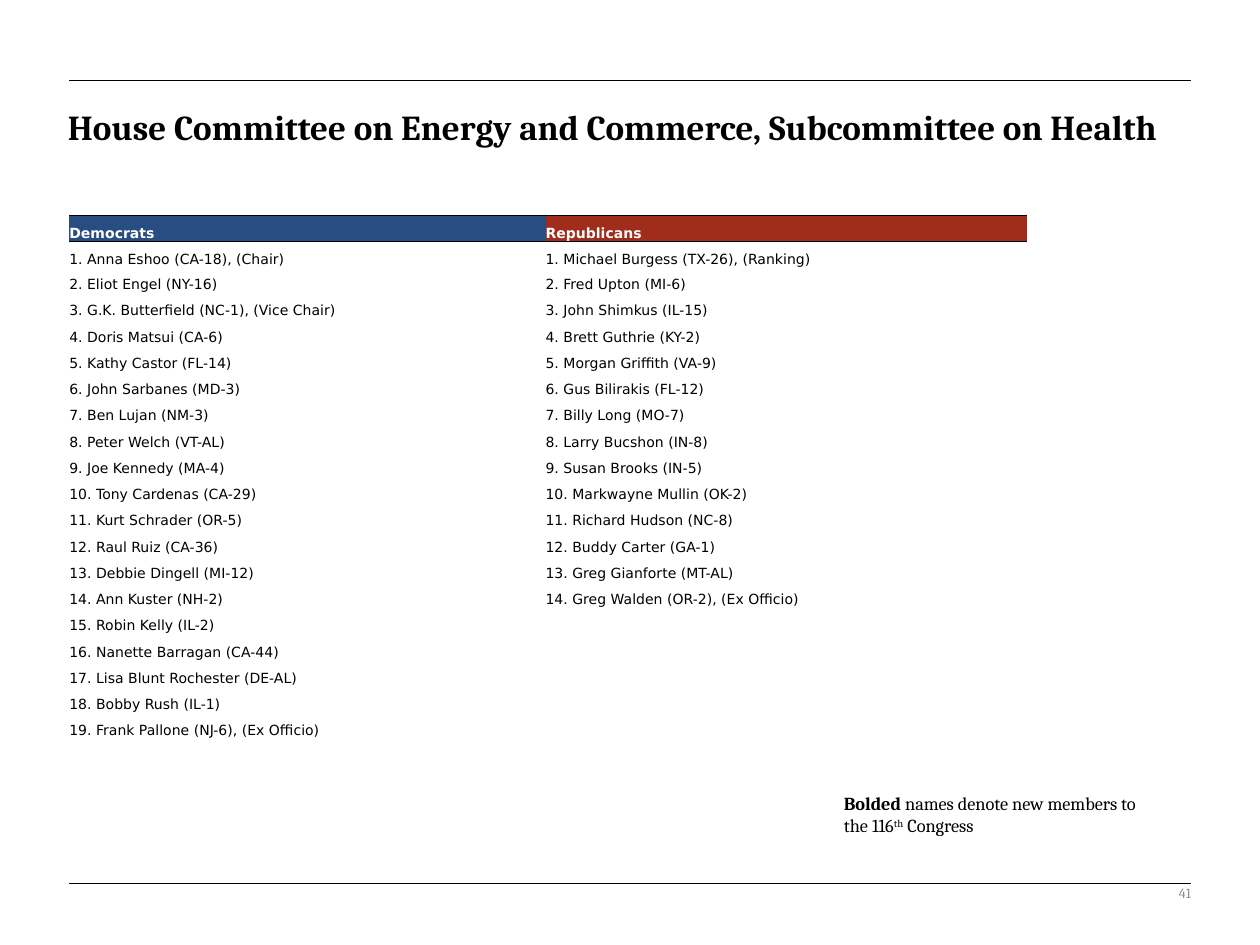
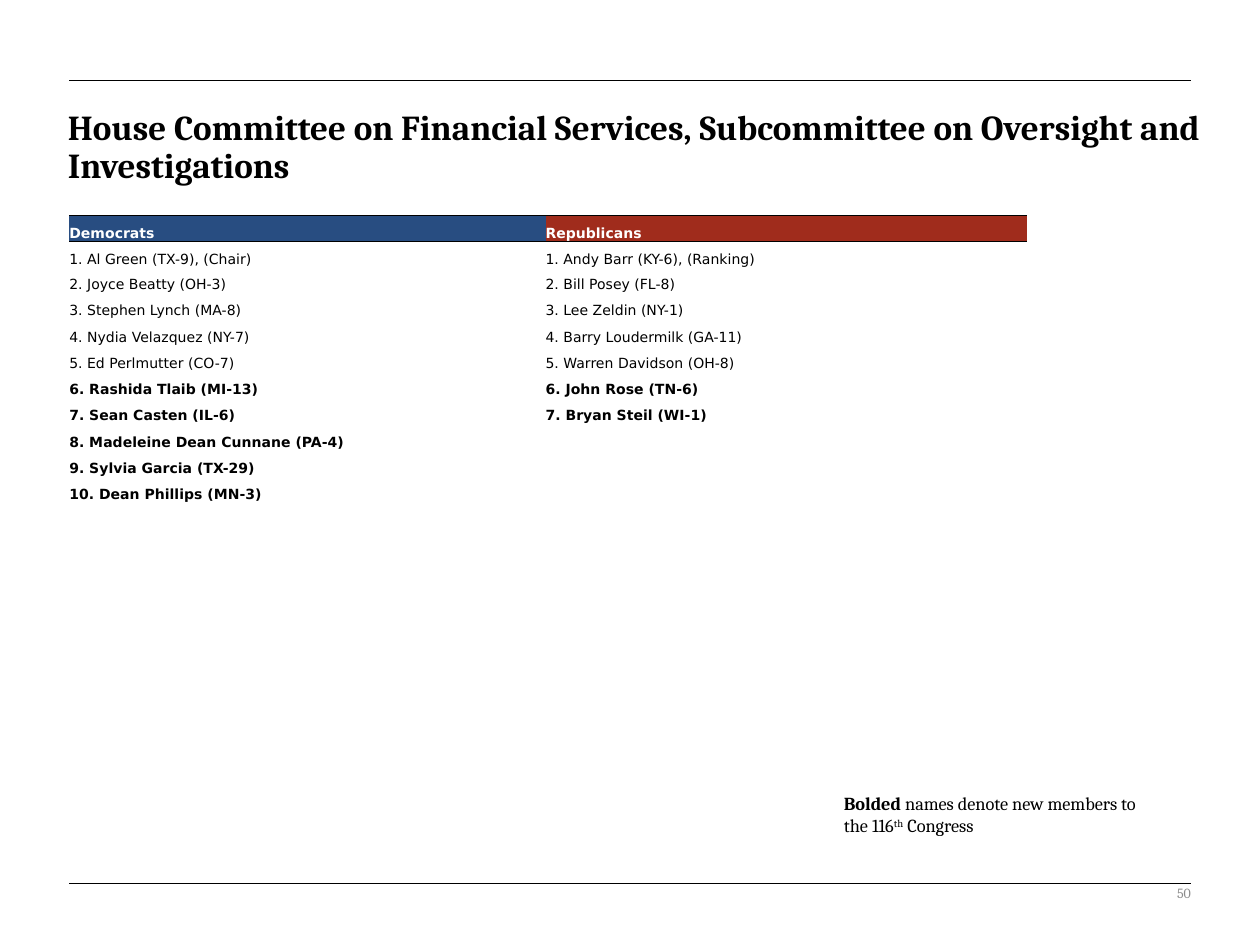
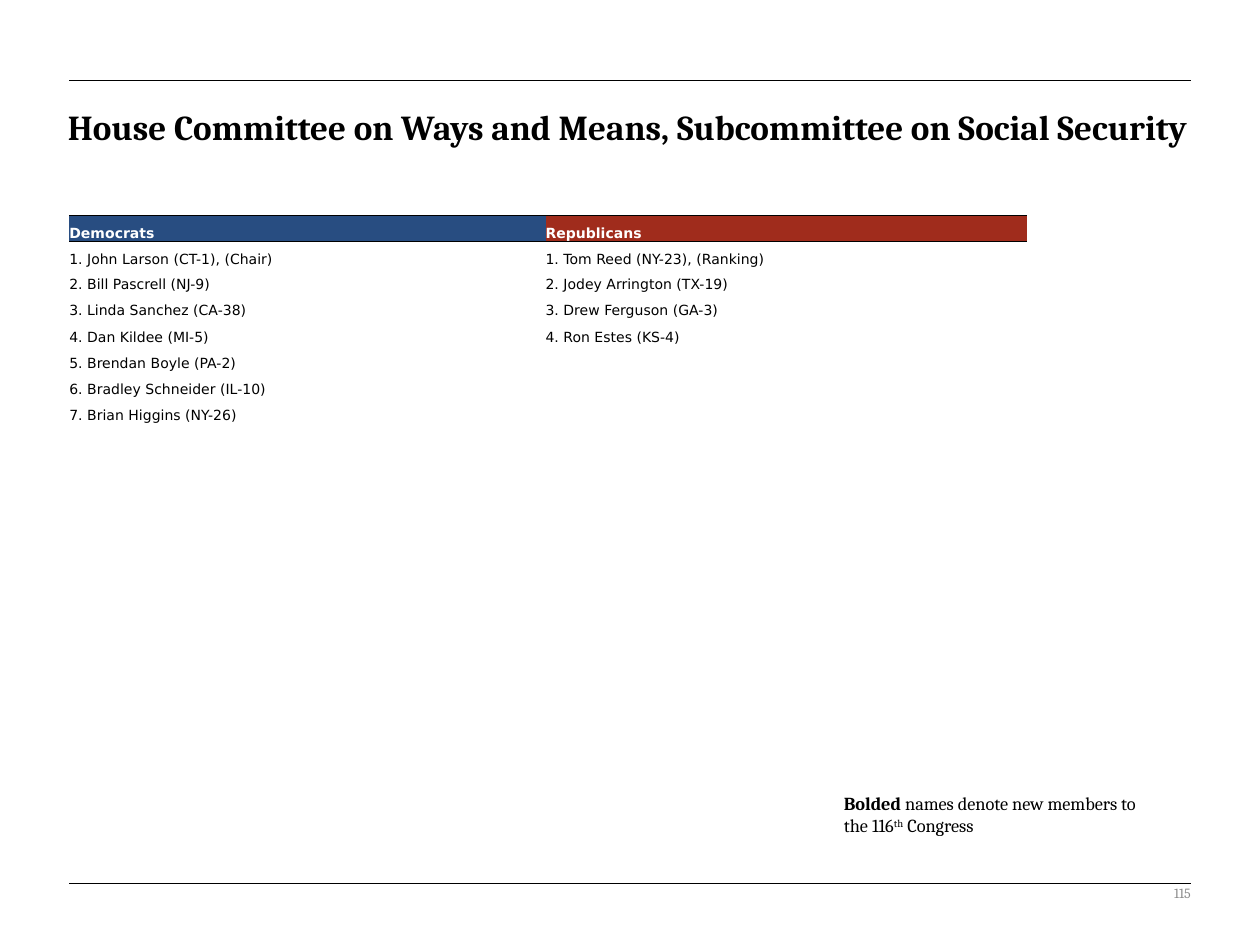
from dataclasses import dataclass
from itertools import zip_longest
from typing import NamedTuple

from lxml import etree
from pptx import Presentation
from pptx import util as u
from pptx.dml.color import RGBColor
from pptx.enum import shapes, text
from pptx.oxml import ns

COLS, ROWS = 100, 75
UNIT = u.Inches(0.1)


@dataclass(frozen=True)
class Theme:
    serif: str = "Cambria"
    sans: str = "DejaVu Sans"
    ink: str = "000000"
    muted: str = "8C8C8C"
    white: str = "FFFFFF"
    blue: str = "284D81"
    red: str = "A02C1C"
    title: float = 20
    note: float = 10.5
    small: float = 8
    rule: float = 0.5


T = Theme()


class Box(NamedTuple):
    x: float
    y: float
    w: float
    h: float

    def emu(self):
        return [grid(v) for v in self]


class Roster(NamedTuple):
    returning: list
    new: list = []

    def entries(self):
        names = self.returning + self.new
        return [(f"{i}. {name}", i > len(self.returning))
                for i, name in enumerate(names, 1)]


FRAME = Box(5.5, 6.4, 89, 63.7)
TITLE = Box(4.4, 8.3, 92, 7)
TABLE = Box(5.5, 17.1, 76, ROWS / 36)
NOTE = Box(66, 62.4, 27, 4.5)
PAGE = Box(70.6, 68.9, 24.9, 4)
SPLIT = (37.8, 38.2)
TIGHT_ROW = 2


def grid(n):
    return u.Emu(round(n * UNIT))


def add_run(p, words, size, font=T.serif, color=T.ink, bold=False):
    r = p.add_run()
    r.text = words
    r.font.name = font
    r.font.size = u.Pt(size)
    r.font.bold = bold
    r.font.color.rgb = RGBColor.from_string(color)
    return r


def add_textbox(s, box):
    tf = s.shapes.add_textbox(*box.emu()).text_frame
    tf.word_wrap = True
    return tf


def add_frame(s, box):
    for y in (box.y + box.h, box.y):
        line = s.shapes.add_connector(
            shapes.MSO_CONNECTOR.STRAIGHT,
            grid(box.x), grid(y), grid(box.x + box.w), grid(y))
        line.line.width = u.Pt(T.rule)
        line.line.color.rgb = RGBColor.from_string(T.ink)
        etree.SubElement(line._element.spPr, ns.qn("a:effectLst"))


def add_page_number(s, box, number):
    tf = add_textbox(s, box)
    tf.vertical_anchor = text.MSO_ANCHOR.MIDDLE
    p = tf.paragraphs[0]
    p.alignment = text.PP_ALIGN.RIGHT
    add_run(p, str(number), T.small, color=T.muted)


def add_title(s, box, words):
    p = add_textbox(s, box).paragraphs[0]
    p.line_spacing = 0.9
    add_run(p, words, T.title, bold=True)


def add_note(s, box):
    tf = add_textbox(s, box)
    tf.auto_size = text.MSO_AUTO_SIZE.SHAPE_TO_FIT_TEXT
    p = tf.paragraphs[0]
    add_run(p, "Bolded ", T.note, bold=True)
    add_run(p, "names denote new members to the 116", T.note)
    r = add_run(p, "th", T.note)
    r._r.get_or_add_rPr().set("baseline", "30000")
    add_run(p, " Congress", T.note)


def set_borders(cell, ruled):
    tc_pr = cell._tc.get_or_add_tcPr()
    for side in "LRTB":
        ln = etree.SubElement(tc_pr, ns.qn(f"a:ln{side}"))
        if side in ruled:
            ln.set("w", str(u.Pt(T.rule)))
            fill = etree.SubElement(ln, ns.qn("a:solidFill"))
            etree.SubElement(fill, ns.qn("a:srgbClr"), val=T.ink)
        else:
            etree.SubElement(ln, ns.qn("a:noFill"))


def fill_cell(cell, words, color=T.ink, bold=False, fill=None, ruled=""):
    cell.margin_left = cell.margin_right = 0
    cell.margin_top = cell.margin_bottom = 0
    cell.vertical_anchor = text.MSO_ANCHOR.BOTTOM
    set_borders(cell, ruled)
    if fill:
        cell.fill.solid()
        cell.fill.fore_color.rgb = RGBColor.from_string(fill)
    else:
        cell.fill.background()
    p = cell.text_frame.paragraphs[0]
    if words:
        add_run(p, words, T.small, T.sans, color, bold)
    else:
        etree.SubElement(p._p, ns.qn("a:endParaRPr"), sz=str(T.small * 100))


def add_members(s, box, democrats, republicans):
    pairs = list(zip_longest(democrats.entries(), republicans.entries(),
                             fillvalue=("", False)))
    count = len(pairs) + 1
    area = box._replace(h=box.h * count)
    table = s.shapes.add_table(count, len(SPLIT), *area.emu()).table
    table.first_row = table.horz_banding = False
    for column, width in zip(table.columns, SPLIT):
        column.width = grid(width)
    for i, row in enumerate(table.rows):
        row.height = grid(2 if i == TIGHT_ROW else box.h)
    parties = (("Democrats", T.blue), ("Republicans", T.red))
    for j, (party, fill) in enumerate(parties):
        fill_cell(table.cell(0, j), party, T.white, True, fill, "TB")
    for i, pair in enumerate(pairs, 1):
        for j, (words, bold) in enumerate(pair):
            fill_cell(table.cell(i, j), words, bold=bold,
                      ruled="T" if i == 1 else "")


def add_committee_slide(prs, number, title, democrats, republicans):
    s = prs.slides.add_slide(prs.slide_layouts[6])
    add_frame(s, FRAME)
    add_page_number(s, PAGE, number)
    add_title(s, TITLE, title)
    add_note(s, NOTE)
    add_members(s, TABLE, democrats, republicans)


COMMITTEES = [
    (41, "House Committee on Energy and Commerce, Subcommittee on Health",
     Roster(["Anna Eshoo (CA-18), (Chair)", "Eliot Engel (NY-16)",
             "G.K. Butterfield (NC-1), (Vice Chair)", "Doris Matsui (CA-6)",
             "Kathy Castor (FL-14)", "John Sarbanes (MD-3)",
             "Ben Lujan (NM-3)", "Peter Welch (VT-AL)",
             "Joe Kennedy (MA-4)", "Tony Cardenas (CA-29)",
             "Kurt Schrader (OR-5)", "Raul Ruiz (CA-36)",
             "Debbie Dingell (MI-12)", "Ann Kuster (NH-2)",
             "Robin Kelly (IL-2)", "Nanette Barragan (CA-44)",
             "Lisa Blunt Rochester (DE-AL)", "Bobby Rush (IL-1)",
             "Frank Pallone (NJ-6), (Ex Officio)"]),
     Roster(["Michael Burgess (TX-26), (Ranking)", "Fred Upton (MI-6)",
             "John Shimkus (IL-15)", "Brett Guthrie (KY-2)",
             "Morgan Griffith (VA-9)", "Gus Bilirakis (FL-12)",
             "Billy Long (MO-7)", "Larry Bucshon (IN-8)",
             "Susan Brooks (IN-5)", "Markwayne Mullin (OK-2)",
             "Richard Hudson (NC-8)", "Buddy Carter (GA-1)",
             "Greg Gianforte (MT-AL)", "Greg Walden (OR-2), (Ex Officio)"])),
    (50, "House Committee on Financial Services, "
         "Subcommittee on Oversight and Investigations",
     Roster(["Al Green (TX-9), (Chair)", "Joyce Beatty (OH-3)",
             "Stephen Lynch (MA-8)", "Nydia Velazquez (NY-7)",
             "Ed Perlmutter (CO-7)"],
            ["Rashida Tlaib (MI-13)", "Sean Casten (IL-6)",
             "Madeleine Dean Cunnane (PA-4)", "Sylvia Garcia (TX-29)",
             "Dean Phillips (MN-3)"]),
     Roster(["Andy Barr (KY-6), (Ranking)", "Bill Posey (FL-8)",
             "Lee Zeldin (NY-1)", "Barry Loudermilk (GA-11)",
             "Warren Davidson (OH-8)"],
            ["John Rose (TN-6)", "Bryan Steil (WI-1)"])),
    (115, "House Committee on Ways and Means, "
          "Subcommittee on Social Security",
     Roster(["John Larson (CT-1), (Chair)", "Bill Pascrell (NJ-9)",
             "Linda Sanchez (CA-38)", "Dan Kildee (MI-5)",
             "Brendan Boyle (PA-2)", "Bradley Schneider (IL-10)",
             "Brian Higgins (NY-26)"]),
     Roster(["Tom Reed (NY-23), (Ranking)", "Jodey Arrington (TX-19)",
             "Drew Ferguson (GA-3)", "Ron Estes (KS-4)"])),
]


def main():
    prs = Presentation()
    prs.slide_width, prs.slide_height = grid(COLS), grid(ROWS)
    for committee in COMMITTEES:
        add_committee_slide(prs, *committee)
    prs.save("out.pptx")


if __name__ == "__main__":
    main()
